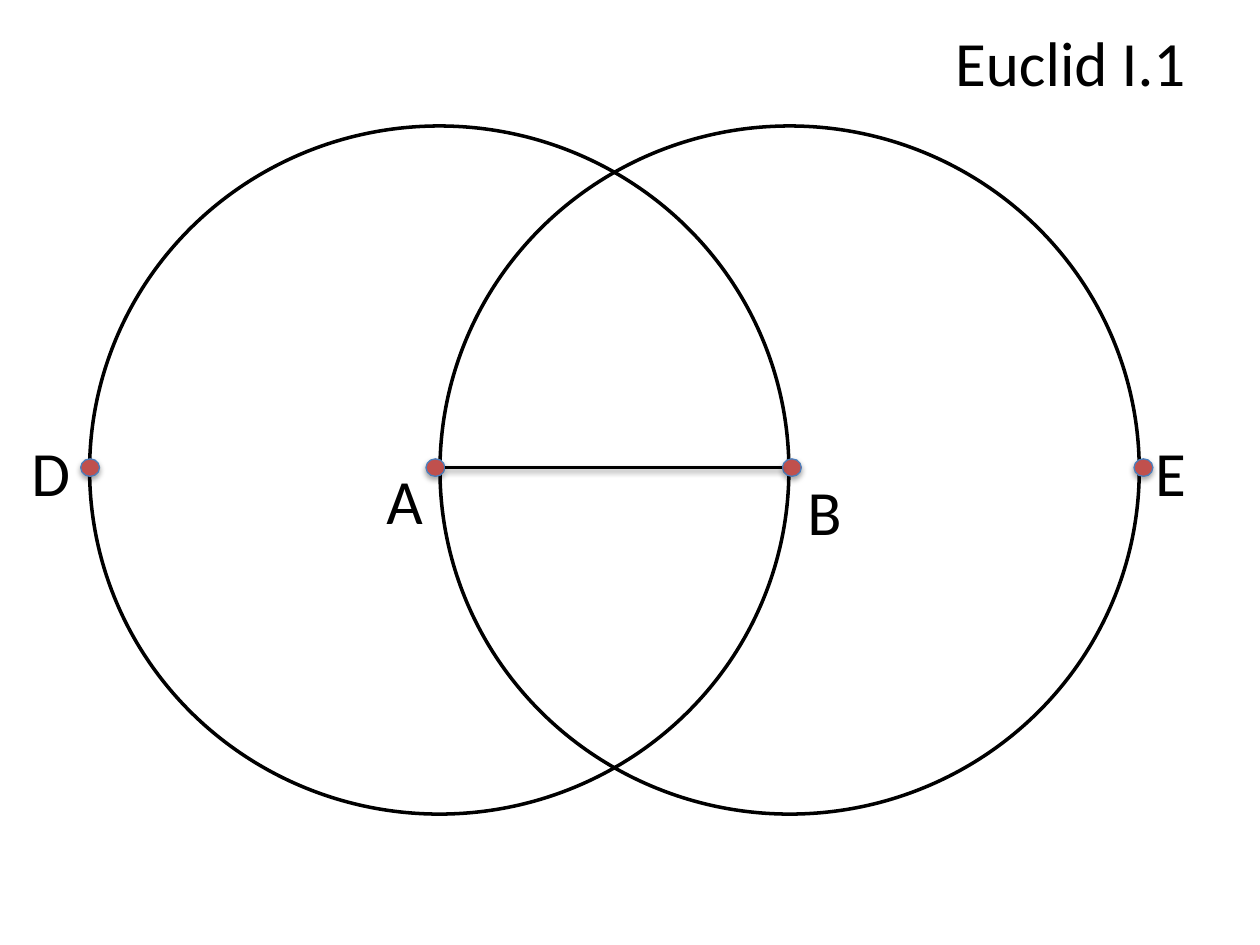
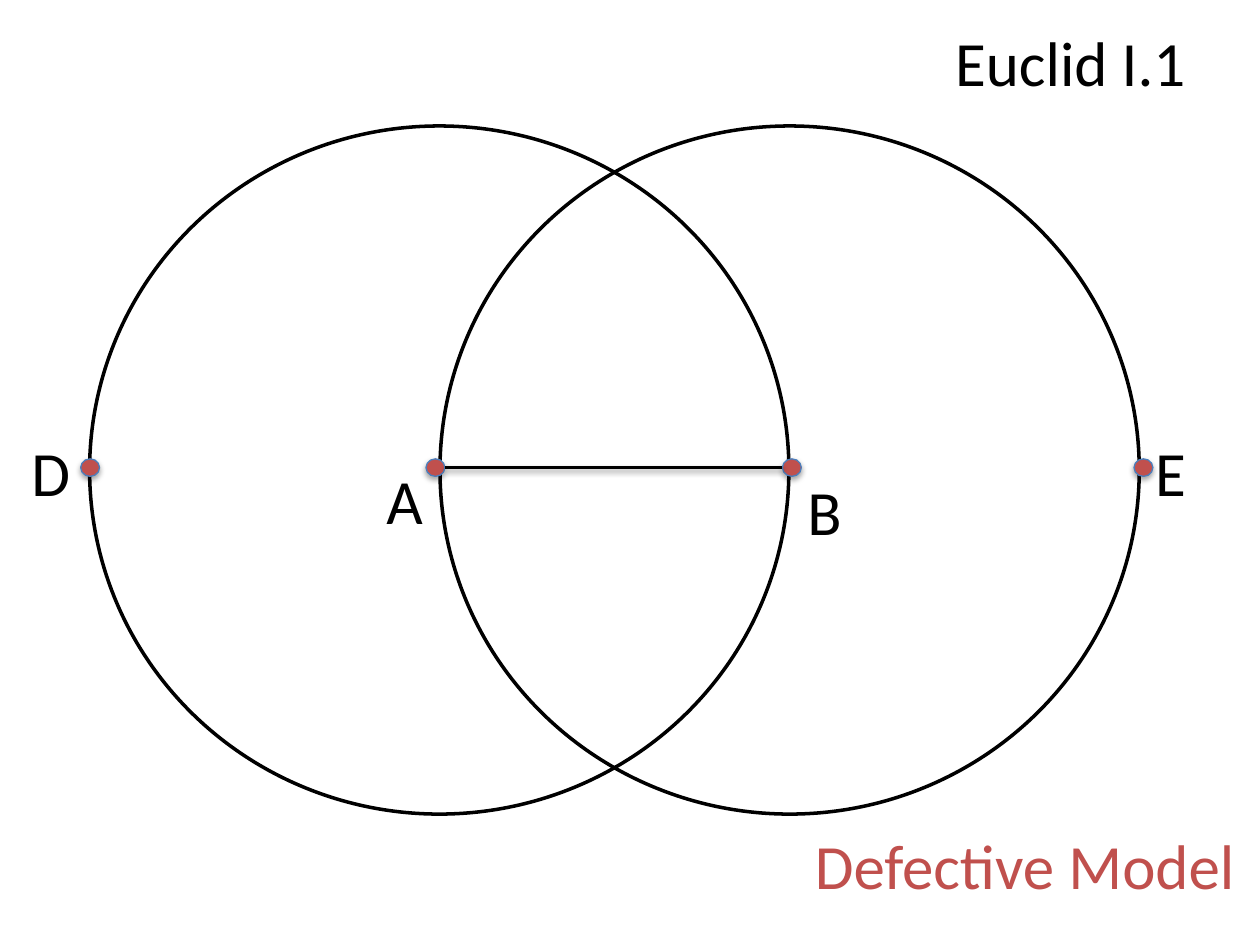
from lxml import etree
from pptx import Presentation
from pptx.dml.color import RGBColor
from pptx.enum.shapes import MSO_CONNECTOR, MSO_SHAPE
from pptx.enum.text import MSO_ANCHOR, MSO_AUTO_SIZE, PP_ALIGN
from pptx.oxml.ns import qn
from pptx.util import Pt

OVAL = MSO_SHAPE.OVAL
STRAIGHT = MSO_CONNECTOR.STRAIGHT
TOP = MSO_ANCHOR.TOP
LEFT = PP_ALIGN.LEFT
FIT_SHAPE = MSO_AUTO_SIZE.SHAPE_TO_FIT_TEXT

BLACK, WHITE, RED, BLUE = "000000", "FFFFFF", "C0504D", "4B7EBC"
TEXT_HEIGHT = 51
CIRCLE_TOP, CIRCLE_WIDTH, CIRCLE_HEIGHT = 72, 399.6, 393.2
CIRCLE_LEFTS = [51.2, 251.4]
DOT_WIDTH, DOT_HEIGHT = 10.8, 10
AXIS_Y = 267.2
DOT_LEFTS = {"A": 243.4, "B": 447.1, "D": 46.1, "E": 648}
POINT_LABELS = [
    ("D", 10.8, 244, 36.7),
    ("E", 653, 244, 32.4),
    ("B", 454.3, 266.4, 34.6),
    ("A", 213.8, 260, 36),
]
CAPTIONS = [[], [("Defective Model", 458.6, 468.7, 257)]]


def write_text(shape, text, left, top, width, color):
    shape.left, shape.top = Pt(left), Pt(top)
    shape.width, shape.height = Pt(width), Pt(TEXT_HEIGHT)
    frame = shape.text_frame
    frame.text = text
    frame.word_wrap = False
    frame.auto_size = FIT_SHAPE
    frame.vertical_anchor = TOP
    paragraph = frame.paragraphs[0]
    paragraph.alignment = LEFT
    font = paragraph.runs[0].font
    font.name, font.size = "Calibri", Pt(36)
    font.color.rgb = RGBColor.from_string(color)


def style_line(shape, color, width, shadow_alpha=None, shadow_distance=None):
    shape.line.color.rgb = RGBColor.from_string(color)
    shape.line.width = Pt(width)
    properties = shape._element.spPr
    effects = properties.find(qn("a:effectLst"))
    if effects is None:
        effects = etree.SubElement(properties, qn("a:effectLst"))
    if shadow_alpha:
        shadow = etree.SubElement(
            effects, qn("a:outerShdw"), blurRad=str(Pt(3.1)),
            dist=str(Pt(shadow_distance)), dir="5400000", rotWithShape="0")
        shadow_color = etree.SubElement(shadow, qn("a:srgbClr"), val=BLACK)
        etree.SubElement(shadow_color, qn("a:alpha"), val=str(shadow_alpha * 1000))


presentation = Presentation()
presentation.slide_width, presentation.slide_height = Pt(720), Pt(540)
title_only = presentation.slide_layouts[5]

for captions in CAPTIONS:
    slide = presentation.slides.add_slide(title_only)
    write_text(slide.shapes.title, "Euclid I.1", 538.6, 10, 147.6, BLACK)

    circles = slide.shapes.add_group_shape()
    for left in CIRCLE_LEFTS:
        circle = circles.shapes.add_shape(
            OVAL, Pt(left), Pt(CIRCLE_TOP), Pt(CIRCLE_WIDTH), Pt(CIRCLE_HEIGHT))
        circle.shadow.inherit = False
        if left == CIRCLE_LEFTS[0]:
            circle.fill.solid()
            circle.fill.fore_color.rgb = RGBColor.from_string(WHITE)
        else:
            circle.fill.background()
        style_line(circle, BLACK, 2)

    for text, left, top, width in POINT_LABELS:
        label = slide.shapes.add_textbox(0, 0, 0, 0)
        write_text(label, text, left, top, width, BLACK)

    for left in DOT_LEFTS.values():
        dot = slide.shapes.add_shape(
            OVAL, Pt(left), Pt(AXIS_Y - DOT_HEIGHT / 2), Pt(DOT_WIDTH), Pt(DOT_HEIGHT))
        dot.shadow.inherit = False
        dot.fill.solid()
        dot.fill.fore_color.rgb = RGBColor.from_string(RED)
        style_line(dot, BLUE, 0.75, 35, 1.8)

    segment = slide.shapes.add_connector(
        STRAIGHT, Pt(DOT_LEFTS["A"] + DOT_WIDTH), Pt(AXIS_Y), Pt(DOT_LEFTS["B"]), Pt(AXIS_Y))
    style_line(segment, BLACK, 1.5, 38, 1.6)

    for text, left, top, width in captions:
        caption = slide.shapes.add_textbox(0, 0, 0, 0)
        write_text(caption, text, left, top, width, RED)

presentation.save("out.pptx")
